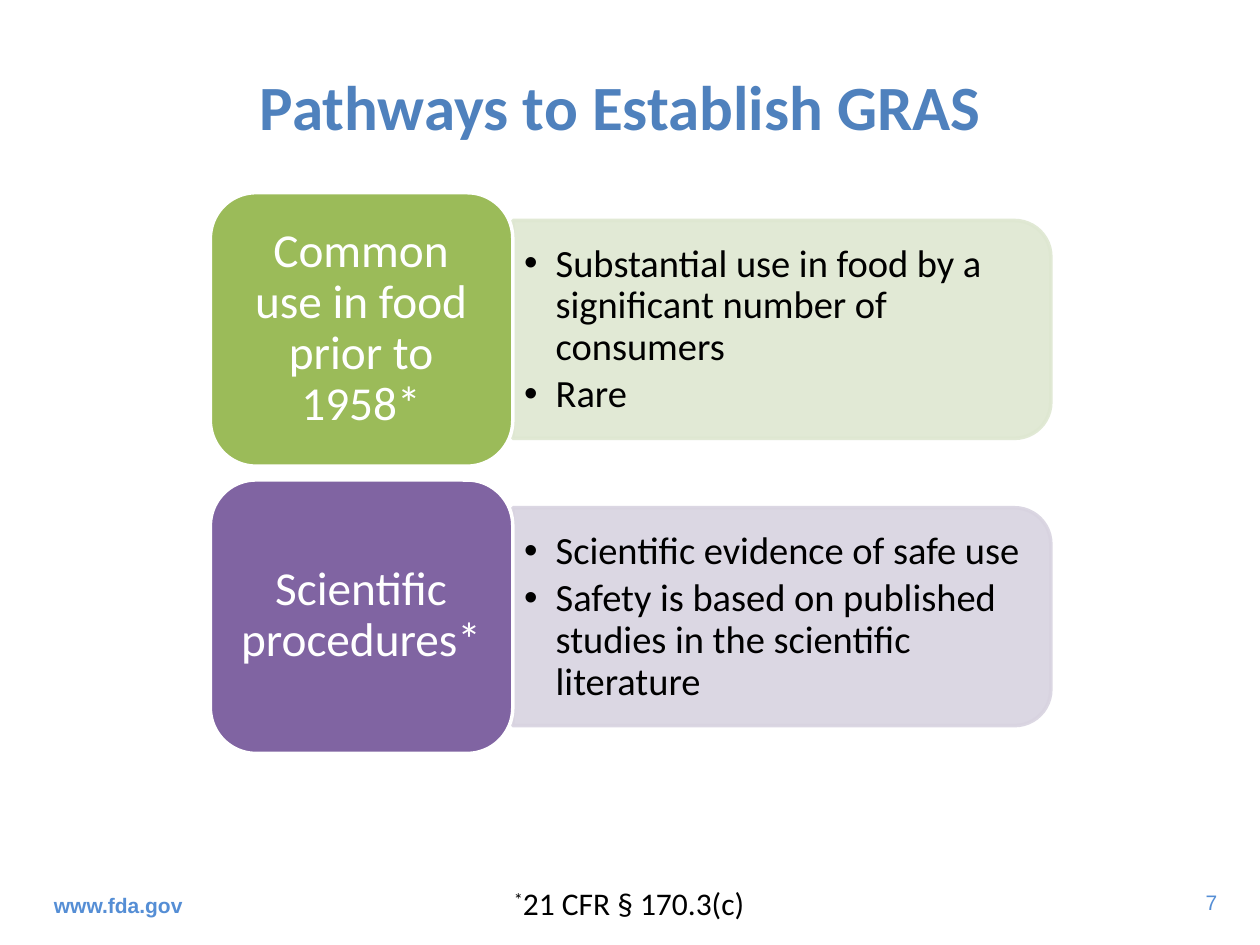
from lxml import etree
from pptx import Presentation
from pptx.dml.color import RGBColor
from pptx.enum import shapes, text
from pptx.oxml.ns import qn
from pptx.util import Inches, Pt

HUES = {"title": "4F81BD", "foot": "558ED5", "ink": "000000", "white": "FFFFFF",
        "green": "9BBB59", "mint": "DEE7D1", "purple": "8064A2", "lilac": "D8D3E0"}
TITLE = "Pathways to Establish GRAS"
PATHS = [
    ("Common use in food prior to 1958*", "green", "mint",
     ["Substantial use in food by a significant number of consumers", "Rare"]),
    ("Scientific procedures*", "purple", "lilac",
     ["Scientific evidence of safe use",
      "Safety is based on published studies in the scientific literature"]),
]
LEFT, TOP, STEP = 1.67, 1.53, 2.28
CARD_W, CARD_H = 2.4, 2.17
BAR_W, BAR_H = 4.27, 1.73
KIND = shapes.MSO_SHAPE
ALIGN = text.PP_ALIGN
MIDDLE = text.MSO_ANCHOR.MIDDLE


def rgb(hue):
    return RGBColor.from_string(HUES[hue])


def style(run, size, hue, face="Calibri", bold=False):
    font = run.font
    font.size, font.name, font.bold = Pt(size), face, bold
    font.color.rgb = rgb(hue)


def add_text(slide, box, lines, size, hue, face="Calibri", bold=False,
             align=ALIGN.LEFT, anchor=text.MSO_ANCHOR.TOP, wrap=True, pad=(0.1, 0.05)):
    frame = slide.shapes.add_textbox(*map(Inches, box)).text_frame
    frame.word_wrap, frame.vertical_anchor = wrap, anchor
    frame.margin_left = frame.margin_right = Inches(pad[0])
    frame.margin_top = frame.margin_bottom = Inches(pad[1])
    frame.text = "\n".join(lines)
    for para in frame.paragraphs:
        para.alignment = align
        for run in para.runs:
            style(run, size, hue, face, bold)
    return frame


def add_block(slide, kind, box, fill, edge, alpha=None):
    block = slide.shapes.add_shape(kind, *map(Inches, box))
    block.shadow.inherit = False
    block.fill.solid()
    block.fill.fore_color.rgb = rgb(fill)
    block.line.color.rgb = rgb(edge)
    block.line.width = Pt(2)
    if alpha:
        for tint in block._element.spPr.iter(qn("a:srgbClr")):
            etree.SubElement(tint, qn("a:alpha"), val=str(alpha * 1000))
    return block


def add_bullet(para):
    props = para._p.get_or_add_pPr()
    props.set("marL", str(Inches(0.25)))
    props.set("indent", str(-Inches(0.25)))
    etree.SubElement(props, qn("a:buFont"), typeface="Arial")
    etree.SubElement(props, qn("a:buChar"), char="•")
    para.level = 1
    para.line_spacing = 0.9
    para.space_after = Pt(3.3)


def add_path(slide, row, label, dark, pale, points):
    top = TOP + row * STEP
    mid, edge = top + CARD_H / 2, LEFT + CARD_W
    bar = add_block(slide, KIND.ROUND_2_SAME_RECTANGLE,
                    (edge + (BAR_W - BAR_H) / 2, mid - BAR_W / 2, BAR_H, BAR_W),
                    pale, pale, 90)
    bar.rotation = 90
    frame = add_text(slide, (edge, mid - 0.78, 4.18, 1.57), points, 22, "ink",
                     anchor=MIDDLE, pad=(0.09, 0.05))
    for para in frame.paragraphs:
        add_bullet(para)
    add_block(slide, KIND.ROUNDED_RECTANGLE, (LEFT, top, CARD_W, CARD_H), dark, "white")
    frame = add_text(slide, (LEFT + 0.1, top + 0.1, CARD_W - 0.21, CARD_H - 0.21),
                     [label], 27, "white", align=ALIGN.CENTER, anchor=MIDDLE,
                     pad=(0.11, 0.06))
    frame.paragraphs[0].line_spacing = 0.9


def main():
    deck = Presentation()
    deck.slide_width, deck.slide_height = Inches(10), Inches(7.5)
    slide = deck.slides.add_slide(deck.slide_layouts[5])

    title = slide.shapes.title
    title.left, title.top, title.width, title.height = map(Inches, (0.27, 0.33, 9.31, 1.01))
    title.text_frame.text = TITLE
    title.text_frame.vertical_anchor = MIDDLE
    para = title.text_frame.paragraphs[0]
    para.alignment = ALIGN.CENTER
    style(para.runs[0], 36, "title", bold=True)

    for row, path in enumerate(PATHS):
        add_path(slide, row, *path)

    note = add_text(slide, (3.98, 6.97, 2.07, 0.4), ["*"], 18, "ink", wrap=False)
    para = note.paragraphs[0]
    para.runs[0].font._element.set("baseline", "30000")
    cite = para.add_run()
    cite.text = "21 CFR § 170.3(c)"
    style(cite, 18, "ink")

    add_text(slide, (0.33, 6.98, 3.17, 0.4), ["www.fda.gov"], 12, "foot", "Arial", True,
             anchor=MIDDLE)
    add_text(slide, (9.35, 7.01, 0.41, 0.3), ["7"], 12, "foot", "Arial",
             align=ALIGN.RIGHT, wrap=False)
    deck.save("out.pptx")


if __name__ == "__main__":
    main()
